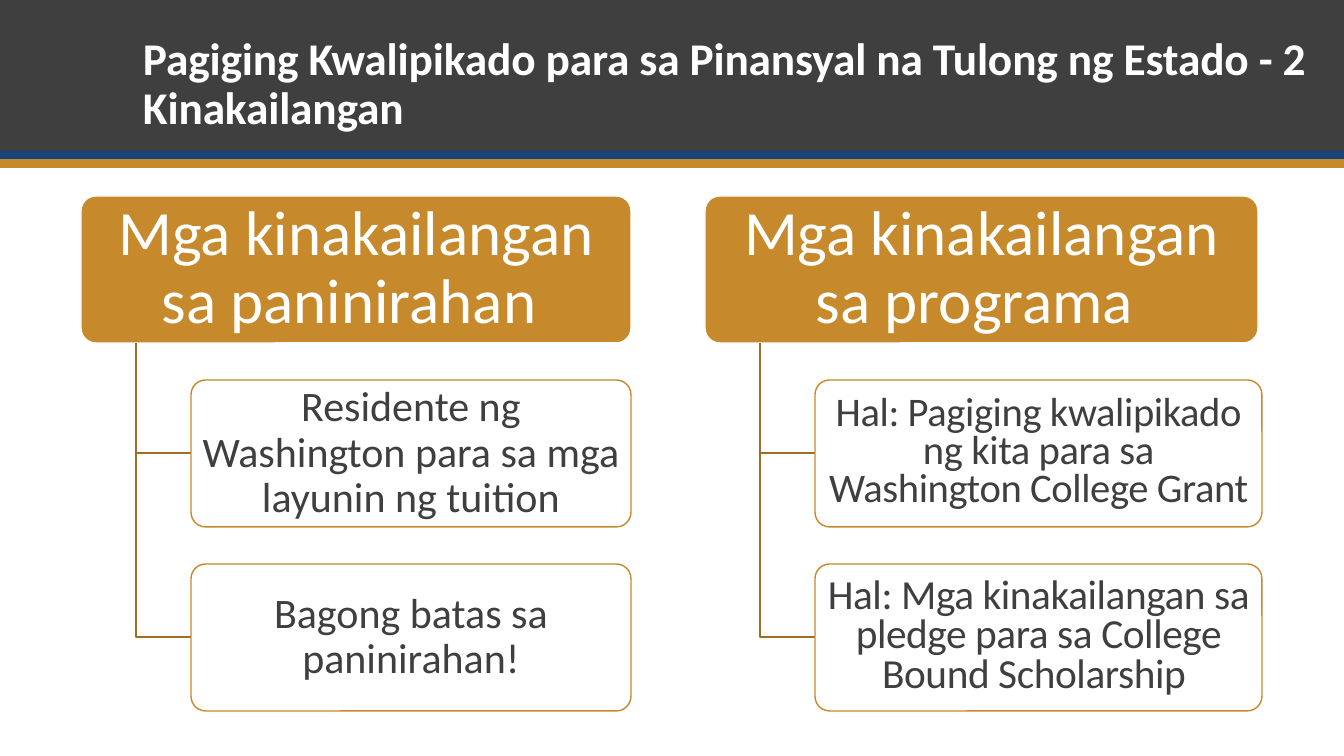
from pptx import Presentation
from pptx.dml.color import RGBColor
from pptx.enum.shapes import MSO_SHAPE as Preset
from pptx.enum.text import MSO_ANCHOR as Anchor, PP_ALIGN as Align
from pptx.util import Pt

PX = 914400 / 100.8
SLIDE_W, SLIDE_H = 1344, 756
COLORS = {
    "dark": "3F3F3F",
    "blue": "174479",
    "gold": "C6892B",
    "branch": "9F6E22",
    "white": "FFFFFF",
}
CARD_H, ROW_PITCH, INDENT = 147, 184, 110
COLUMNS = [
    {
        "box": (81, 196, 550),
        "heading": "Mga kinakailangan sa paninirahan ",
        "card_width": 440,
        "cards": [
            ("Residente ng Washington para sa mga layunin ng tuition", 30, 0.9, 0),
            ("Bagong batas sa paninirahan!", 30, 0.9, 0),
        ],
    },
    {
        "box": (705, 196, 553),
        "heading": "Mga kinakailangan sa programa ",
        "card_width": 447,
        "cards": [
            ("Hal: Pagiging kwalipikado ng kita para sa Washington College Grant ",
             29, Pt(27), -30),
            ("Hal: Mga kinakailangan sa pledge para sa College Bound Scholarship ",
             29.5, Pt(28), -30),
        ],
    },
]


def px(length):
    return round(length * PX)


def color(name):
    return RGBColor.from_string(COLORS[name])


def write(frame, text, size, ink, spacing=0.9, tracking=0, bold=False,
          align=Align.CENTER, anchor=Anchor.MIDDLE, insets=(6, 4)):
    frame.word_wrap = True
    frame.vertical_anchor = anchor
    frame.margin_left = frame.margin_right = px(insets[0])
    frame.margin_top = frame.margin_bottom = px(insets[1])
    paragraph = frame.paragraphs[0]
    paragraph.alignment = align
    paragraph.line_spacing = spacing
    run = paragraph.add_run()
    run.text = text
    run.font.name = "Calibri"
    run.font.size = Pt(size)
    run.font.bold = bold
    run.font.color.rgb = color(ink)
    if tracking:
        run.font._element.set("spc", str(tracking))


def add_block(slide, preset, box, fill, outline=None):
    block = slide.shapes.add_shape(preset, *map(px, box))
    block.shadow.inherit = False
    block.fill.solid()
    block.fill.fore_color.rgb = color(fill)
    if outline:
        block.line.color.rgb = color(outline)
        block.line.width = Pt(1)
    else:
        block.line.fill.background()
    return block


def add_card(slide, box, fill, outline):
    card = add_block(slide, Preset.ROUNDED_RECTANGLE, box, fill, outline)
    card.adjustments[0] = 0.1
    return card.text_frame


def add_branch(slide, left, top, right, bottom):
    outline = slide.shapes.build_freeform(px(left), px(top))
    outline.add_line_segments(
        [(px(left), px(bottom)), (px(right), px(bottom))], close=False)
    branch = outline.convert_to_shape()
    branch.shadow.inherit = False
    branch.fill.background()
    branch.line.color.rgb = color("branch")
    branch.line.width = Pt(1)


def add_banner(slide, left, top, width):
    for offset, height, fill in ((0, 151, "dark"), (151, 9, "blue"), (159, 9, "gold")):
        add_block(slide, Preset.RECTANGLE, (left, top + offset, width, height), fill)
    title = slide.shapes.add_textbox(
        *map(px, (left + 133, top + 25, width - 133, 114)))
    write(title.text_frame,
          "Pagiging Kwalipikado para sa Pinansyal na Tulong ng Estado - 2 Kinakailangan",
          32.4, "white", tracking=-10, bold=True, align=Align.LEFT,
          anchor=Anchor.BOTTOM, insets=(10, 5))


def add_column(slide, box, heading, card_width, cards):
    left, top, width = box
    write(add_card(slide, (left, top, width, CARD_H), "gold", "white"),
          heading, 45, "white", insets=(9, 6))
    card_left = left + INDENT
    for row, (text, size, spacing, tracking) in enumerate(cards, 1):
        card_top = top + row * ROW_PITCH
        add_branch(slide, left + INDENT // 2, top + CARD_H,
                   card_left, card_top + CARD_H // 2)
        write(add_card(slide, (card_left, card_top, card_width, CARD_H), "white", "gold"),
              text, size, "dark", spacing, tracking)


def main():
    deck = Presentation()
    deck.slide_width, deck.slide_height = px(SLIDE_W), px(SLIDE_H)
    slide = deck.slides.add_slide(deck.slide_layouts[6])
    add_banner(slide, 0, 0, SLIDE_W)
    for column in COLUMNS:
        add_column(slide, **column)
    deck.save("out.pptx")


if __name__ == "__main__":
    main()
